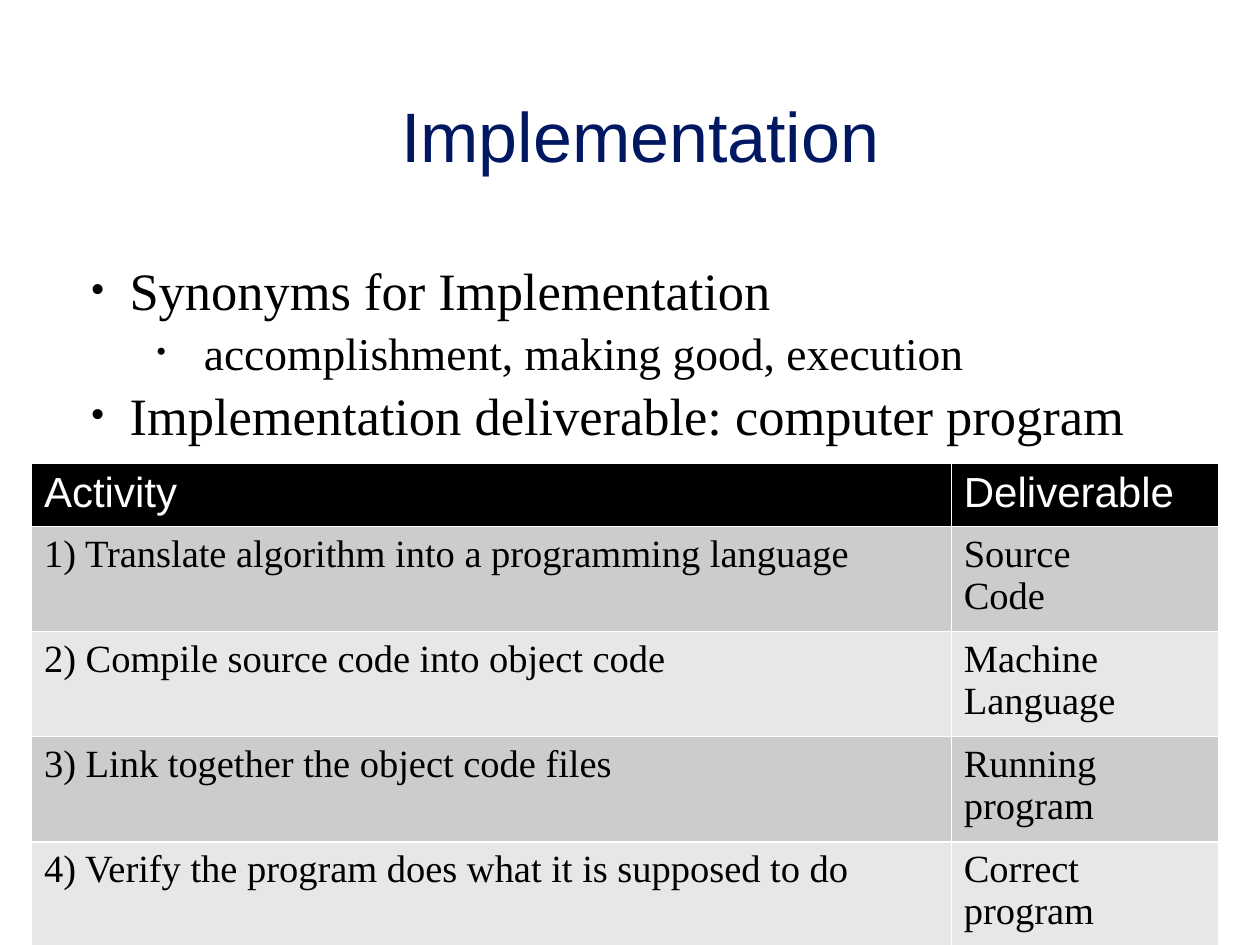
from lxml import etree
from pptx import Presentation
from pptx.dml.color import RGBColor
from pptx.enum import text
from pptx.oxml import ns
from pptx.util import Inches, Pt

NAVY = RGBColor(0x00, 0x17, 0x62)
BLACK = RGBColor(0x00, 0x00, 0x00)
WHITE = RGBColor(0xFF, 0xFF, 0xFF)
DARK_BAND = RGBColor(0xCC, 0xCC, 0xCC)
LIGHT_BAND = RGBColor(0xE7, 0xE7, 0xE7)
SANS = "Arial"
SERIF = "Times New Roman"

LEVELS = [
    {"size": 30, "margin": 0.43, "indent": -0.31, "bullet": 80},
    {"size": 26, "margin": 1.02, "indent": -0.38, "bullet": 65},
]
POINTS = [
    (0, "Synonyms for Implementation"),
    (1, "accomplishment, making good, execution"),
    (0, "Implementation deliverable: computer program"),
]
HEADER = ("Activity", "Deliverable")
ACTIVITIES = [
    ("1) Translate algorithm into a programming language", "Source\nCode"),
    ("2) Compile source code into object code", "Machine Language"),
    ("3) Link together the object code files", "Running program"),
    ("4) Verify the program does what it is supposed to do", "Correct\nprogram"),
]
COLUMN_WIDTHS = (7.3, 2.12)
ROW_HEIGHT = 0.41


def add_run(paragraph, wording, size, font_name, color):
    """Add one formatted run to a paragraph."""
    run = paragraph.add_run()
    run.text = wording
    run.font.size = Pt(size)
    run.font.name = font_name
    run.font.bold = False
    run.font.color.rgb = color


def set_bullet(paragraph, level):
    """Give a paragraph the indent and round bullet of its level."""
    properties = paragraph._p.get_or_add_pPr()
    properties.set("marL", str(Inches(level["margin"])))
    properties.set("indent", str(Inches(level["indent"])))
    color = etree.SubElement(properties, ns.qn("a:buClr"))
    etree.SubElement(color, ns.qn("a:srgbClr"), val=str(BLACK))
    etree.SubElement(properties, ns.qn("a:buSzPct"), val=str(level["bullet"] * 1000))
    etree.SubElement(properties, ns.qn("a:buFont"), typeface=SERIF)
    etree.SubElement(properties, ns.qn("a:buChar"), char="•")


def place_title(slide, left, top, width, height):
    """Move and format the title placeholder."""
    title = slide.shapes.title
    title.left, title.top = Inches(left), Inches(top)
    title.width, title.height = Inches(width), Inches(height)
    title.text_frame.vertical_anchor = text.MSO_ANCHOR.MIDDLE
    paragraph = title.text_frame.paragraphs[0]
    paragraph.alignment = text.PP_ALIGN.CENTER
    paragraph.line_spacing = 0.9
    add_run(paragraph, "Implementation", 40, SANS, NAVY)


def add_points(slide, left, top, width, height):
    """Add the two-level bulleted list."""
    box = slide.shapes.add_textbox(Inches(left), Inches(top), Inches(width), Inches(height))
    frame = box.text_frame
    frame.word_wrap = True
    for index, (depth, wording) in enumerate(POINTS):
        paragraph = frame.add_paragraph() if index else frame.paragraphs[0]
        paragraph.level = depth
        paragraph.space_before = Pt(2)
        set_bullet(paragraph, LEVELS[depth])
        add_run(paragraph, wording, LEVELS[depth]["size"], SERIF, BLACK)


def fill_cell(cell, wording, fill, size, font_name, color):
    """Fill a cell and write one paragraph for each line of its wording."""
    cell.fill.solid()
    cell.fill.fore_color.rgb = fill
    frame = cell.text_frame
    for index, line in enumerate(wording.split("\n")):
        paragraph = frame.add_paragraph() if index else frame.paragraphs[0]
        add_run(paragraph, line, size, font_name, color)


def add_activities(slide, left, top, width, height):
    """Add the table of activities and deliverables."""
    rows = [HEADER, *ACTIVITIES]
    graphic_frame = slide.shapes.add_table(
        len(rows), len(HEADER), Inches(left), Inches(top), Inches(width), Inches(height)
    )
    table = graphic_frame.table
    for column, column_width in zip(table.columns, COLUMN_WIDTHS):
        column.width = Inches(column_width)
    for row_index, wordings in enumerate(rows):
        table.rows[row_index].height = Inches(ROW_HEIGHT)
        if row_index == 0:
            style = (BLACK, 24, SANS, WHITE)
        else:
            style = (DARK_BAND if row_index % 2 else LIGHT_BAND, 22, SERIF, BLACK)
        for column_index, wording in enumerate(wordings):
            fill_cell(table.cell(row_index, column_index), wording, *style)
    graphic_frame.height = Inches(height)


def main():
    """Build the slide and save it."""
    presentation = Presentation()
    presentation.slide_width, presentation.slide_height = Inches(10), Inches(7.5)
    slide = presentation.slides.add_slide(presentation.slide_layouts[5])
    place_title(slide, 0.58, 0.38, 9, 1.46)
    add_points(slide, 0.5, 2, 9, 1.75)
    add_activities(slide, 0.25, 3.68, 9.42, 3.74)
    presentation.save("out.pptx")


if __name__ == "__main__":
    main()
